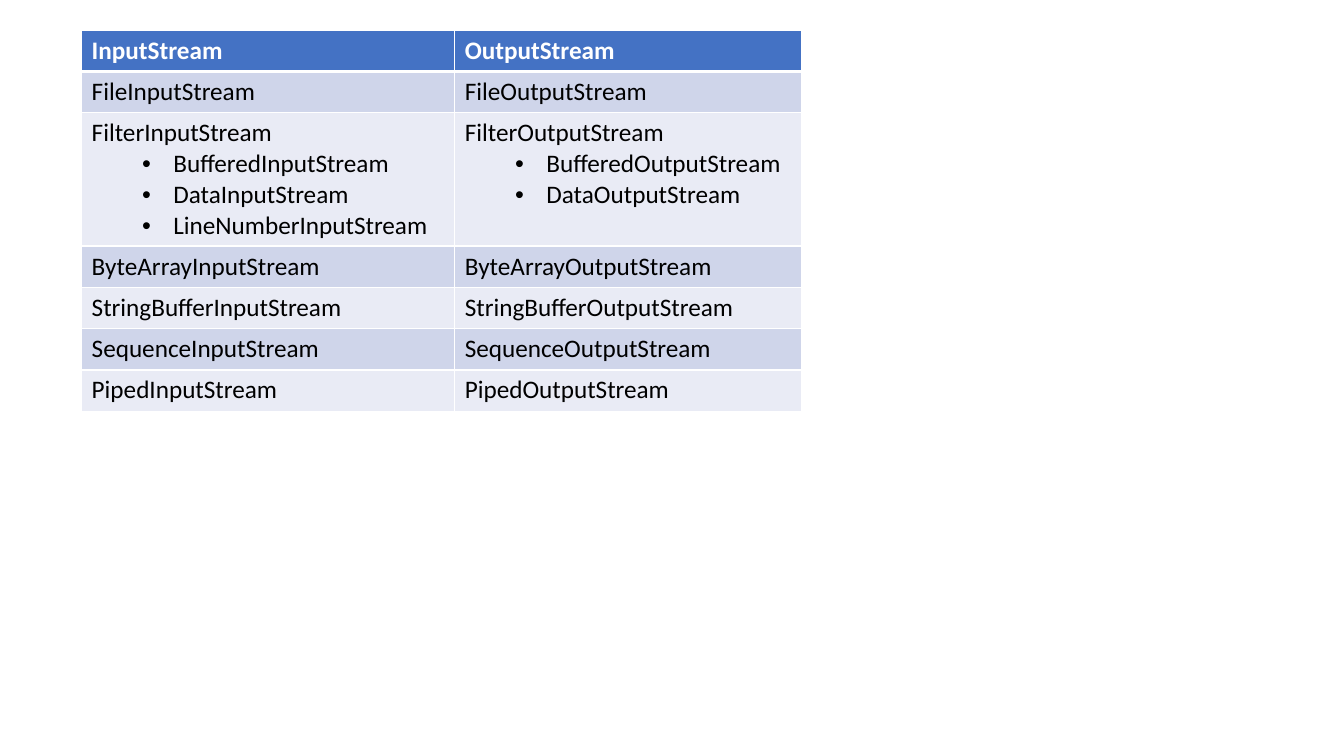
"""Build a slide with a table of Java input and output stream classes."""
import pptx
import pptx.dml.color
import pptx.oxml
import pptx.oxml.ns
import pptx.util
from pptx.util import Inches

HEADER = ("InputStream", "OutputStream")
ROWS = [
    (["FileInputStream"], ["FileOutputStream"]),
    (["FilterInputStream", "BufferedInputStream", "DataInputStream", "LineNumberInputStream"],
     ["FilterOutputStream", "BufferedOutputStream", "DataOutputStream"]),
    (["ByteArrayInputStream"], ["ByteArrayOutputStream"]),
    (["StringBufferInputStream"], ["StringBufferOutputStream"]),
    (["SequenceInputStream"], ["SequenceOutputStream"]),
    (["PipedInputStream"], ["PipedOutputStream"]),
]
LEFT, TOP = 0.81, 0.3
COL_WIDTHS = (3.7, 3.44)
ROW_HEIGHT, LINE_HEIGHT = 0.41, 0.3
BLUE, BANDS = "4472C4", ("CFD5EA", "E9EBF5")
WHITE, BLACK = "FFFFFF", "000000"


def rgb(color):
    return pptx.dml.color.RGBColor.from_string(color)


def set_borders(cell, top, bottom):
    tcPr = cell._tc.get_or_add_tcPr()
    for side, width in (("L", 1), ("R", 1), ("T", top), ("B", bottom)):
        tcPr.append(pptx.oxml.parse_xml(
            f'<a:ln{side} {pptx.oxml.ns.nsdecls("a")} w="{pptx.util.Pt(width)}">'
            f'<a:solidFill><a:srgbClr val="{WHITE}"/></a:solidFill></a:ln{side}>'))


def set_bullet(p):
    p.level = 1
    pPr = p._p.get_or_add_pPr()
    pPr.set("marL", str(Inches(0.81)))
    pPr.set("indent", str(Inches(-0.31)))
    for tag in ('buFont {} typeface="Arial"', 'buChar {} char="•"'):
        pPr.append(pptx.oxml.parse_xml(f'<a:{tag.format(pptx.oxml.ns.nsdecls("a"))}/>'))


def fill_cell(cell, lines, fill, color, bold):
    cell.fill.solid()
    cell.fill.fore_color.rgb = rgb(fill)
    tf = cell.text_frame
    for i, line in enumerate(lines):
        p = tf.add_paragraph() if i else tf.paragraphs[0]
        if i:
            set_bullet(p)
        r = p.add_run()
        r.text = line
        r.font.name = "Calibri"
        r.font.size = pptx.util.Pt(18)
        r.font.bold = bold
        r.font.color.rgb = rgb(color)


def main():
    prs = pptx.Presentation()
    prs.slide_width, prs.slide_height = Inches(13.33), Inches(7.5)
    slide = prs.slides.add_slide(prs.slide_layouts[6])

    rows = [tuple([name] for name in HEADER)] + ROWS
    heights = [ROW_HEIGHT + LINE_HEIGHT * (max(map(len, row)) - 1) for row in rows]
    table = slide.shapes.add_table(
        len(rows), len(HEADER), Inches(LEFT), Inches(TOP),
        Inches(sum(COL_WIDTHS)), Inches(sum(heights))).table
    for col, width in zip(table.columns, COL_WIDTHS):
        col.width = Inches(width)
    for i, (row, height) in enumerate(zip(rows, heights)):
        table.rows[i].height = Inches(height)
        header = i == 0
        fill = BLUE if header else BANDS[(i - 1) % 2]
        for j, lines in enumerate(row):
            cell = table.cell(i, j)
            set_borders(cell, 3 if i == 1 else 1, 3 if header else 1)
            fill_cell(cell, lines, fill, WHITE if header else BLACK, header)
    prs.save("out.pptx")


if __name__ == "__main__":
    main()
